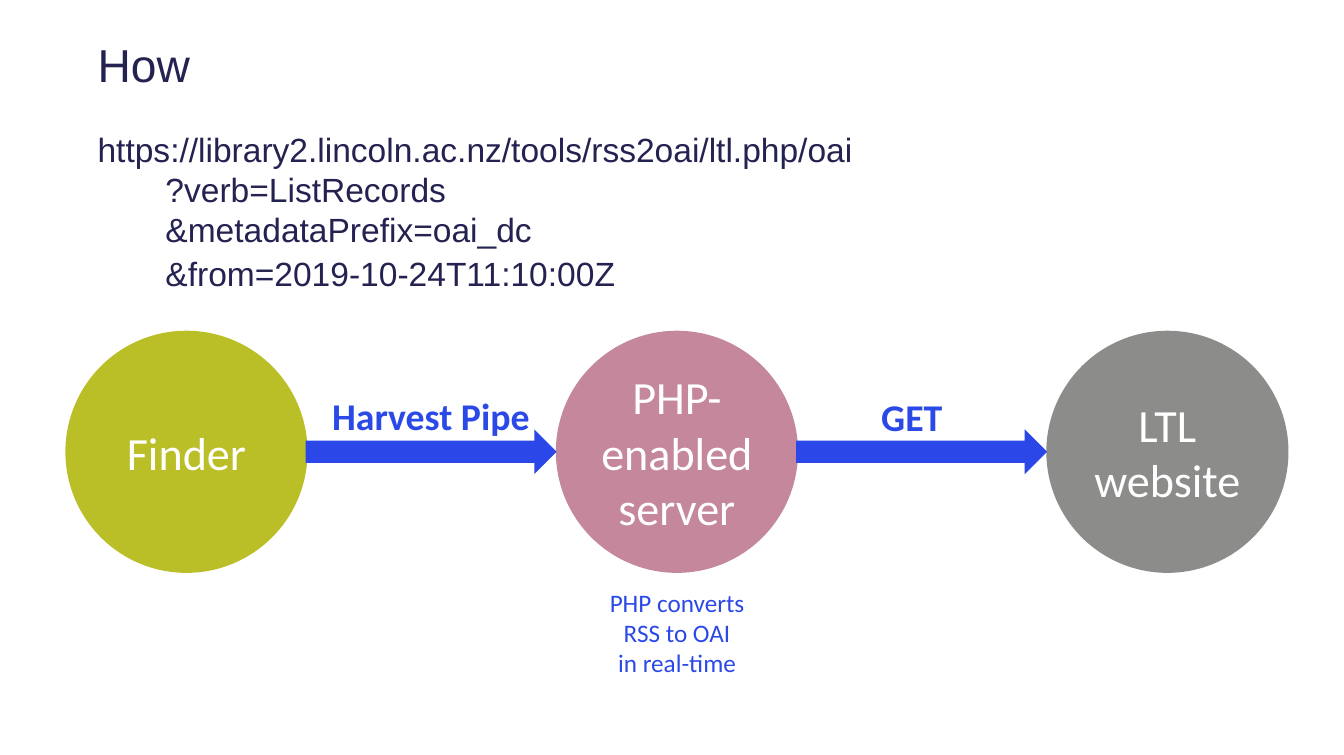
from pptx import Presentation
from pptx.dml.color import RGBColor
from pptx.enum import shapes, text
from pptx.oxml.xmlchemy import OxmlElement
from pptx.util import Cm, Pt

NAVY = RGBColor(0x24, 0x22, 0x50)
BLUE = RGBColor(0x2B, 0x47, 0xE7)
LABEL_BLUE = RGBColor(0x2B, 0x49, 0xE7)
WHITE = RGBColor(0xFF, 0xFF, 0xFF)
LIME = RGBColor(0xBA, 0xBF, 0x28)
ROSE = RGBColor(0xC4, 0x87, 0x9B)
GREY = RGBColor(0x8C, 0x8C, 0x8B)

CIRCLE_LEFT, CIRCLE_TOP, CIRCLE_SIZE, CIRCLE_STEP = 3.3, 16.69, 12.22, 24.75
ARROW_LEFT, ARROW_TOP, ARROW_WIDTH, ARROW_HEIGHT = 15.42, 21.67, 12.67, 2.26


def write(para, lines, size, color, font="Calibri", bold=False, align=text.PP_ALIGN.LEFT):
    para.alignment = align
    for index, line in enumerate(lines):
        if index:
            para.add_line_break()
        span = para.add_run()
        span.text = line
        span.font.name = font
        span.font.size = Pt(size)
        span.font.bold = bold
        span.font.color.rgb = color


def fill_placeholder(box, left, top, width, height, words, size):
    box.left, box.top, box.width, box.height = Cm(left), Cm(top), Cm(width), Cm(height)
    frame = box.text_frame
    frame.auto_size = text.MSO_AUTO_SIZE.NONE
    frame.vertical_anchor = text.MSO_ANCHOR.TOP
    para = frame.paragraphs[0]
    properties = para._p.get_or_add_pPr()
    properties.set("marL", "0")
    properties.set("indent", "0")
    properties.append(OxmlElement("a:buNone"))
    para.line_spacing = 0.9
    para.space_before = Pt(0)
    write(para, [words], size, NAVY, "Arial")


def add_filled(page, kind, left, top, width, height, color):
    shape = page.shapes.add_shape(kind, Cm(left), Cm(top), Cm(width), Cm(height))
    shape.shadow.inherit = False
    shape.fill.solid()
    shape.fill.fore_color.rgb = color
    shape.line.fill.background()
    return shape


def add_circle(page, position, lines, color):
    circle = add_filled(page, shapes.MSO_SHAPE.OVAL, CIRCLE_LEFT + position * CIRCLE_STEP,
                        CIRCLE_TOP, CIRCLE_SIZE, CIRCLE_SIZE, color)
    frame = circle.text_frame
    frame.word_wrap = True
    frame.vertical_anchor = text.MSO_ANCHOR.MIDDLE
    write(frame.paragraphs[0], lines, 66, WHITE, align=text.PP_ALIGN.CENTER)


def add_arrow(page, position):
    add_filled(page, shapes.MSO_SHAPE.RIGHT_ARROW, ARROW_LEFT + position * CIRCLE_STEP,
               ARROW_TOP, ARROW_WIDTH, ARROW_HEIGHT, BLUE)


def add_label(page, left, top, width, height, lines, size, color, wrap=False, **style):
    box = page.shapes.add_textbox(Cm(left), Cm(top), Cm(width), Cm(height))
    box.text_frame.word_wrap = wrap
    box.text_frame.auto_size = text.MSO_AUTO_SIZE.SHAPE_TO_FIT_TEXT
    write(box.text_frame.paragraphs[0], lines, size, color, **style)


def main():
    deck = Presentation()
    deck.slide_width, deck.slide_height = Cm(67.82), Cm(38.1)
    page = deck.slides.add_slide(deck.slide_layouts[1])

    fill_placeholder(page.shapes.title, 4.67, 2.03, 56.08, 7.37, "How", 66)
    fill_placeholder(page.placeholders[1], 4.67, 6.63, 56.08, 2.84,
                     "https://library2.lincoln.ac.nz/tools/rss2oai/ltl.php/oai", 48)
    for top, width, parameter in (
        (8.41, 14.83, "?verb=ListRecords"),
        (10.44, 19.2, "&metadataPrefix=oai_dc"),
        (12.62, 23.47, "&from=2019-10-24T11:10:00Z"),
    ):
        add_label(page, 8.1, top, width, 2.31, [parameter], 48, NAVY, font="Arial")

    for position, (lines, color) in enumerate((
        (["Finder"], LIME),
        (["PHP-enabled server"], ROSE),
        (["LTL", "website"], GREY),
    )):
        add_circle(page, position, lines, color)
    for position in range(2):
        add_arrow(page, position)

    add_label(page, 16.51, 19.71, 10.85, 2.57, ["Harvest Pipe"], 54, LABEL_BLUE,
              wrap=True, bold=True)
    add_label(page, 44.22, 19.76, 3.63, 2.57, ["GET"], 54, LABEL_BLUE, bold=True)
    add_label(page, 30.48, 29.51, 7.37, 4.88, ["PHP converts", "RSS to OAI", "in real-time"],
              36, LABEL_BLUE, align=text.PP_ALIGN.CENTER)
    deck.save("out.pptx")


if __name__ == "__main__":
    main()
